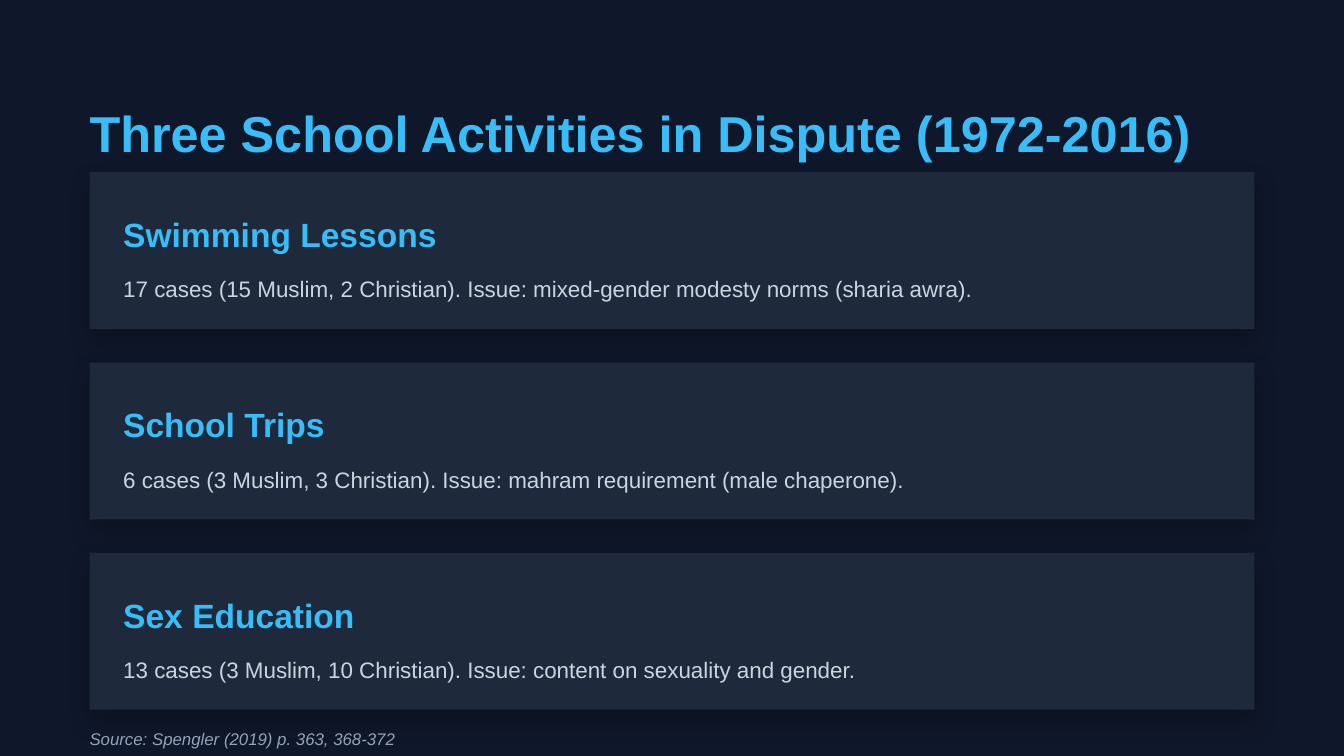
"""Build a slide of three cards on disputed school activities."""
from lxml import etree
from pptx import Presentation
from pptx.dml.color import RGBColor
from pptx.enum import shapes, text
from pptx.oxml import ns
from pptx.util import Pt

TITLE = "Three School Activities in Dispute (1972-2016)"
ACTIVITIES = [
    ("Swimming Lessons",
     "17 cases (15 Muslim, 2 Christian). Issue: mixed-gender modesty norms (sharia awra)."),
    ("School Trips",
     "6 cases (3 Muslim, 3 Christian). Issue: mahram requirement (male chaperone)."),
    ("Sex Education",
     "13 cases (3 Muslim, 10 Christian). Issue: content on sexuality and gender."),
]
SOURCE = "Source: Spengler (2019) p. 363, 368-372"

THEME = {
    "font": "Arial",
    "background": "0F172A",
    "card": "1E293B",
    "shadow": {"color": "000000", "opacity": 20, "blur": 12, "distance": 6, "angle": 90},
    "title": {"size": 27, "color": "38BDF8", "bold": True, "spacing": 1.2},
    "heading": {"size": 18, "color": "38BDF8", "bold": True, "spacing": 1.2},
    "body": {"size": 12, "color": "CBD5E1", "spacing": 1.4},
    "source": {"size": 9, "color": "94A3B8", "italic": True, "spacing": 1.4},
}

PAGE_WIDTH, PAGE_HEIGHT = 720, 405
MARGIN = 48
TEXT_WIDTH = 636.5
CARD_TOP, CARD_WIDTH, CARD_HEIGHT, CARD_GAP = 92.25, 624, 84, 18
PADDING = 18
BODY_OFFSET = 49.5
SOURCE_GAP = 6


def paint(fill, color):
    fill.solid()
    fill.fore_color.rgb = RGBColor.from_string(color)


def add_shadow(shape):
    style = THEME["shadow"]
    shape.shadow.inherit = False
    effects = shape.element.spPr.find(ns.qn("a:effectLst"))
    shadow = etree.SubElement(
        effects, ns.qn("a:outerShdw"), blurRad=str(Pt(style["blur"])),
        dist=str(Pt(style["distance"])), dir=str(style["angle"] * 60000),
        algn="bl", rotWithShape="0")
    color = etree.SubElement(shadow, ns.qn("a:srgbClr"), val=style["color"])
    etree.SubElement(color, ns.qn("a:alpha"), val=str(style["opacity"] * 1000))


def add_card(page, top):
    card = page.shapes.add_shape(
        shapes.MSO_SHAPE.RECTANGLE, Pt(MARGIN), Pt(top), Pt(CARD_WIDTH), Pt(CARD_HEIGHT))
    paint(card.fill, THEME["card"])
    card.line.fill.background()
    add_shadow(card)


def add_text(page, words, role, left, top, width):
    style = THEME[role]
    height = round(style["size"] * style["spacing"], 2)
    box = page.shapes.add_textbox(Pt(left), Pt(top), Pt(width), Pt(height))
    frame = box.text_frame
    frame_format = {
        "word_wrap": True, "vertical_anchor": text.MSO_ANCHOR.TOP,
        "margin_left": 0, "margin_right": 0, "margin_top": 0, "margin_bottom": 0,
    }
    for name, value in frame_format.items():
        setattr(frame, name, value)
    para = frame.paragraphs[0]
    para.line_spacing = style["spacing"]
    span = para.add_run()
    span.text = words
    font_format = {
        "name": THEME["font"], "size": Pt(style["size"]),
        "bold": style.get("bold", False), "italic": style.get("italic", False),
    }
    for name, value in font_format.items():
        setattr(span.font, name, value)
    span.font.color.rgb = RGBColor.from_string(style["color"])


def main():
    deck = Presentation()
    deck.slide_width, deck.slide_height = Pt(PAGE_WIDTH), Pt(PAGE_HEIGHT)
    page = deck.slides.add_slide(deck.slide_layouts[6])
    paint(page.background.fill, THEME["background"])

    tops = [CARD_TOP + i * (CARD_HEIGHT + CARD_GAP) for i in range(len(ACTIVITIES))]
    for top in tops:
        add_card(page, top)

    add_text(page, TITLE, "title", MARGIN, MARGIN, TEXT_WIDTH)
    inner_left = MARGIN + PADDING
    inner_width = CARD_WIDTH - 24
    for top, (heading, body) in zip(tops, ACTIVITIES):
        add_text(page, heading, "heading", inner_left, top + PADDING, inner_width)
        add_text(page, body, "body", inner_left, top + BODY_OFFSET, inner_width)
    source_top = tops[-1] + CARD_HEIGHT + SOURCE_GAP
    add_text(page, SOURCE, "source", MARGIN, source_top, TEXT_WIDTH)

    deck.save("out.pptx")


if __name__ == "__main__":
    main()
